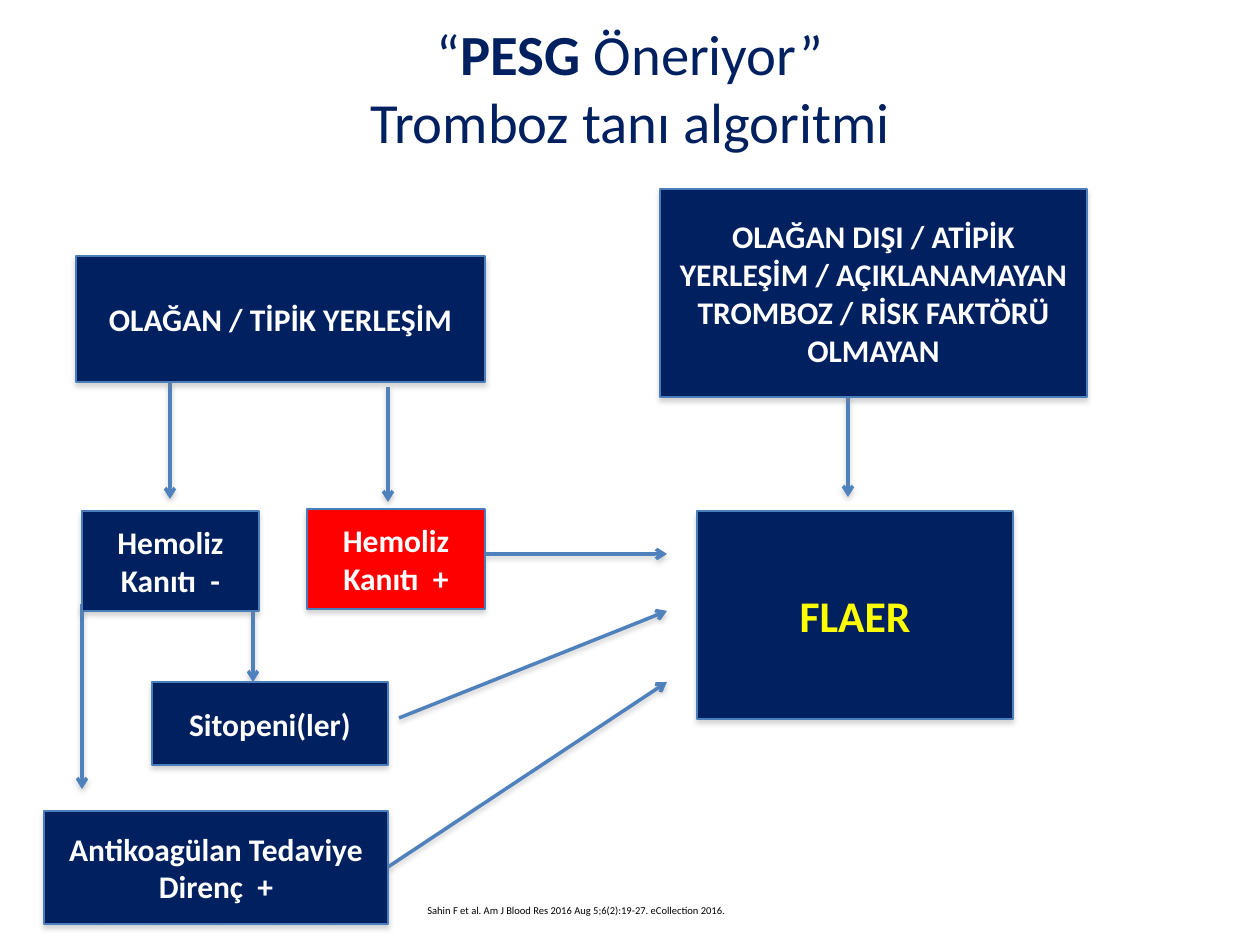
from lxml import etree
from pptx import Presentation
from pptx.dml.color import RGBColor
from pptx.enum.shapes import MSO_CONNECTOR, MSO_SHAPE
from pptx.enum.text import MSO_ANCHOR, PP_ALIGN
from pptx.oxml.ns import qn
from pptx.util import Emu, Pt

RECTANGLE = MSO_SHAPE.RECTANGLE
STRAIGHT = MSO_CONNECTOR.STRAIGHT
MIDDLE, TOP = MSO_ANCHOR.MIDDLE, MSO_ANCHOR.TOP
CENTER, LEFT = PP_ALIGN.CENTER, PP_ALIGN.LEFT

EMU_PER_PX = 914400 / 126
COLORS = {
    "navy": "002060", "red": "FF0000", "yellow": "FFFF00", "white": "FFFFFF",
    "black": "000000", "border": "4A7EBB", "arrow": "4F81BD", "shadow": "808080",
}


def px(value):
    return Emu(round(value * EMU_PER_PX))


def rgb(name):
    return RGBColor.from_string(COLORS[name])


class FlowSlide:
    """Holds the slide and the style of its elements."""

    font_name = "Calibri"

    def __init__(self, slide):
        self.slide = slide

    def fill_text(self, shape, lines, size, color, align=CENTER, anchor=MIDDLE):
        """Fill a shape with lines, each a list of (text, bold) runs."""
        frame = shape.text_frame
        for name, value in {"word_wrap": True, "vertical_anchor": anchor}.items():
            setattr(frame, name, value)
        paragraph = frame.paragraphs[0]
        paragraph.alignment = align
        for index, line in enumerate(lines):
            if index:
                paragraph.add_line_break()
            for text, bold in line:
                run = paragraph.add_run()
                run.text = text
                style = {"name": self.font_name, "size": Pt(size), "bold": bold}
                for name, value in style.items():
                    setattr(run.font, name, value)
                run.font.color.rgb = rgb(color)

    def add_shadow(self, shape, distance, opacity):
        properties = shape.element.spPr
        effects = properties.find(qn("a:effectLst"))
        if effects is None:
            effects = etree.SubElement(properties, qn("a:effectLst"))
        shadow = etree.SubElement(
            effects, qn("a:outerShdw"), blurRad=str(Pt(3.1)),
            dist=str(Pt(distance)), dir="5400000", rotWithShape="0")
        color = etree.SubElement(shadow, qn("a:srgbClr"), val=COLORS["shadow"])
        etree.SubElement(color, qn("a:alpha"), val=str(opacity * 1000))

    def text(self, bounds, lines, size, color, **layout):
        shape = self.slide.shapes.add_textbox(*map(px, bounds))
        self.fill_text(shape, lines, size, color, **layout)

    def box(self, bounds, text, fill="navy", size=18, color="white"):
        shape = self.slide.shapes.add_shape(RECTANGLE, *map(px, bounds))
        shape.fill.solid()
        shape.fill.fore_color.rgb = rgb(fill)
        shape.line.color.rgb = rgb("border")
        shape.line.width = Pt(0.75)
        shape.shadow.inherit = False
        self.add_shadow(shape, distance=1.8, opacity=35)
        self.fill_text(shape, [[(text, True)]], size, color)

    def arrow(self, *ends):
        connector = self.slide.shapes.add_connector(STRAIGHT, *map(px, ends))
        connector.line.color.rgb = rgb("arrow")
        connector.line.width = Pt(2)
        line = connector.element.spPr.find(qn("a:ln"))
        etree.SubElement(line, qn("a:tailEnd"), type="arrow")
        self.add_shadow(connector, distance=1.6, opacity=38)


def main():
    presentation = Presentation()
    presentation.slide_width, presentation.slide_height = px(1260), px(945)
    flow = FlowSlide(presentation.slides.add_slide(presentation.slide_layouts[6]))

    # Title
    flow.text((76, 15, 1108, 144),
              [[("“", False), ("PESG", True), (" Öneriyor”", False)],
               [("Tromboz tanı algoritmi", False)]], 32.4, "navy")

    # Arrows: start x, start y, end x, end y
    for ends in [
        (170, 383, 170, 499),
        (388, 387, 388, 502),
        (848, 382, 848, 497),
        (485, 554, 667, 554),
        (82, 604, 82, 789),
        (253, 611, 253, 682),
        (399, 718, 667, 611),
        (388, 867, 667, 682),
    ]:
        flow.arrow(*ends)

    # Site of thrombosis
    flow.box((76, 256, 409, 126), "OLAĞAN / TİPİK YERLEŞİM")
    flow.box((660, 189, 427, 208),
             "OLAĞAN DIŞI / ATİPİK YERLEŞİM / AÇIKLANAMAYAN "
             "TROMBOZ / RİSK FAKTÖRÜ OLMAYAN")

    # Findings
    flow.box((82, 511, 177, 100), "Hemoliz Kanıtı  -")
    flow.box((307, 509, 178, 100), "Hemoliz Kanıtı  +", fill="red")
    flow.box((152, 682, 236, 83), "Sitopeni(ler)")
    flow.box((44, 811, 344, 113), "Antikoagülan Tedaviye Direnç  +")

    # Test
    flow.box((697, 511, 316, 208), "FLAER", size=25, color="yellow")

    # Reference
    flow.text((415, 898, 781, 25),
              [[("Sahin F et al. Am J Blood Res 2016 Aug 5;6(2):19-27. "
                 "eCollection 2016.", False)]],
              6, "black", align=LEFT, anchor=TOP)

    presentation.save("out.pptx")


if __name__ == "__main__":
    main()
